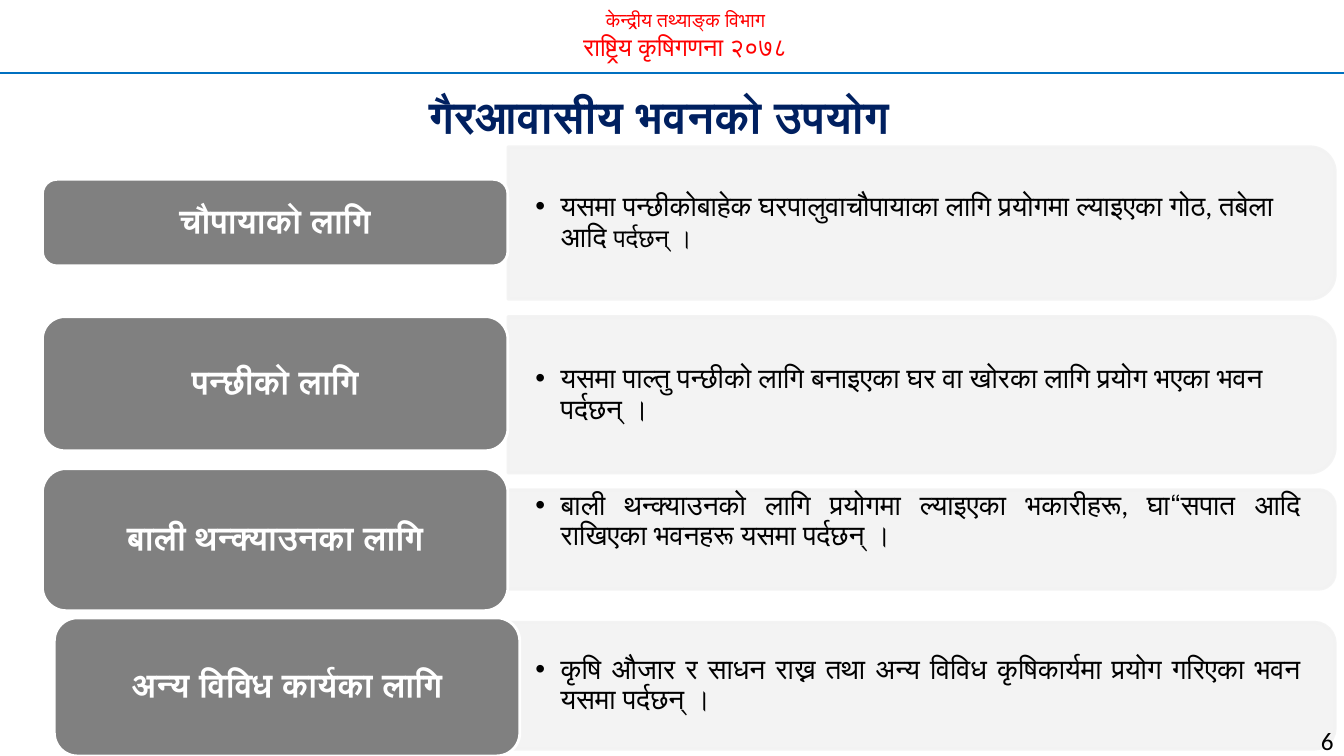
from lxml import etree
from pptx import Presentation
from pptx.dml.color import RGBColor
from pptx.enum.shapes import MSO_CONNECTOR, MSO_SHAPE
from pptx.enum.text import MSO_ANCHOR, PP_ALIGN as ALIGN
from pptx.oxml.ns import qn
from pptx.util import Cm, Pt

RED, NAVY, BLUE = "FF0000", "002060", "0070C0"
GRAY, PALE, WHITE, BLACK = "808080", "F2F2F2", "FFFFFF", "000000"
PANEL_LEFT, PANEL_WIDTH, TEXT_WIDTH = 12.8, 20.85, 20.66
LABEL_WIDTH = 11.73

# label, (label left, top, height), (panel top, height), text lift, font, alignment, runs
USES = [
    ("चौपायाको लागि", (1.07, 4.52, 2.18), (3.7, 3.84), 0, "Calibri", ALIGN.LEFT,
     [("यसमा पन्छीकोबाहेक घरपालुवाचौपायाका लागि प्रयोगमा ल्याइएका गोठ, तबेला आदि ", 20),
      ("पर्दछन् ।", 18)]),
    ("पन्छीको लागि", (1.07, 7.98, 3.38), (7.98, 3.94), 0, "Lato", ALIGN.LEFT,
     [("यसमा पाल्तु पन्छीको लागि बनाइएका घर वा खोरका लागि प्रयोग भएका भवन पर्दछन् ।", 20)]),
    ("बाली थन्क्याउनका लागि", (1.07, 11.81, 3.58), (12.34, 2.51), 0.45, "Calibri", ALIGN.JUSTIFY,
     [("बाली थन्क्याउनको लागि प्रयोगमा ल्याइएका भकारीहरू, घा“सपात आदि राखिएका भवनहरू "
       "यसमा पर्दछन् ।", 20)]),
    ("अन्य विविध कार्यका लागि", (1.37, 15.57, 3.48), (15.68, 3.2), 0, "Lato", ALIGN.JUSTIFY,
     [("कृषि औजार र साधन राख्न तथा अन्य विविध कृषिकार्यमा प्रयोग गरिएका भवन यसमा "
       "पर्दछन् ।", 20)]),
]


def color(value):
    return RGBColor.from_string(value)


def style_font(font, name, size, tint, bold=False):
    font.name, font.size, font.bold = name, Pt(size), bold
    font.color.rgb = color(tint)


def add_shape(slide, kind, left, top, width, height, fill, outline):
    shape = slide.shapes.add_shape(kind, Cm(left), Cm(top), Cm(width), Cm(height))
    shape.shadow.inherit = False
    shape.fill.solid()
    shape.fill.fore_color.rgb = color(fill)
    shape.line.color.rgb = color(outline)
    shape.line.width = Pt(2)
    return shape


def add_text(slide, left, top, width, height, lines, tint, align, bold=False):
    """Add a text box with one paragraph for each (text, size) line."""
    box = slide.shapes.add_textbox(Cm(left), Cm(top), Cm(width), Cm(height))
    frame = box.text_frame
    frame.word_wrap = True
    frame.text = "\n".join(text for text, size in lines)
    for para, (text, size) in zip(frame.paragraphs, lines):
        para.alignment = align
        style_font(para.runs[0].font, "Calibri", size, tint, bold)
    return box


def add_rule(slide, top, width):
    rule = slide.shapes.add_connector(MSO_CONNECTOR.STRAIGHT, 0, Cm(top), width, Cm(top))
    rule.line.color.rgb = color(BLUE)
    rule.line.width = Pt(1.5)
    etree.SubElement(rule._element.spPr, qn("a:effectLst"))


def add_label(slide, text, left, top, height):
    label = add_shape(slide, MSO_SHAPE.ROUNDED_RECTANGLE, left, top, LABEL_WIDTH, height,
                      GRAY, WHITE)
    frame = label.text_frame
    frame.word_wrap = True
    frame.vertical_anchor = MSO_ANCHOR.MIDDLE
    frame.text = text
    para = frame.paragraphs[0]
    para.alignment = ALIGN.CENTER
    para.line_spacing = 0.9
    style_font(para.runs[0].font, "Arial", 24, WHITE, bold=True)


def add_panel(slide, top, height):
    """Add a pale panel rounded on the right: a top-rounded shape turned by 90 degrees."""
    left = PANEL_LEFT + (PANEL_WIDTH - height) / 2
    panel = add_shape(slide, MSO_SHAPE.ROUND_2_SAME_RECTANGLE, left,
                      top + (height - PANEL_WIDTH) / 2, height, PANEL_WIDTH, PALE, PALE)
    panel.rotation = 90
    for tint in panel._element.spPr.iter(qn("a:srgbClr")):
        etree.SubElement(tint, qn("a:alpha"), val="90000")


def add_bullet_text(slide, top, height, font_name, align, runs):
    box = slide.shapes.add_textbox(Cm(PANEL_LEFT), Cm(top), Cm(TEXT_WIDTH), Cm(height))
    frame = box.text_frame
    frame.word_wrap = True
    frame.vertical_anchor = MSO_ANCHOR.MIDDLE
    frame.margin_left = frame.margin_right = Cm(0.69)
    frame.margin_top = frame.margin_bottom = Cm(0.36)
    para = frame.paragraphs[0]
    para.alignment = align
    para.line_spacing = 0.9
    para.level = 1
    properties = para._p.get_or_add_pPr()
    properties.set("marL", str(Cm(0.64)))
    properties.set("indent", str(-Cm(0.64)))
    etree.SubElement(properties, qn("a:buFont"), typeface="Arial")
    etree.SubElement(properties, qn("a:buChar"), char="•")
    for text, size in runs:
        span = para.add_run()
        span.text = text
        style_font(span.font, font_name, size, BLACK)


def main():
    deck = Presentation()
    deck.slide_width, deck.slide_height = Cm(33.87), Cm(19.05)
    page = deck.slides.add_slide(deck.slide_layouts[6])

    add_text(page, 3.18, 0.08, 28.19, 1.63,
             [("केन्द्रीय तथ्याङ्क विभाग", 14), ("राष्ट्रिय कृषिगणना २०७८", 18)],
             RED, ALIGN.CENTER)
    add_rule(page, 1.85, deck.slide_width)

    for label, label_place, (top, height), lift, font_name, align, runs in USES:
        add_panel(page, top, height)
        add_bullet_text(page, top - lift, height, font_name, align, runs)
        add_label(page, label, *label_place)

    number = add_text(page, 31.24, 17.78, 2.62, 1.07, [("6", 18)], BLACK, ALIGN.RIGHT)
    number.text_frame.paragraphs[0].line_spacing = 1.5
    add_text(page, 0, 2.11, 33.22, 1.63, [("गैरआवासीय भवनको उपयोग", 32)],
             NAVY, ALIGN.CENTER, bold=True)
    deck.save("out.pptx")


if __name__ == "__main__":
    main()
